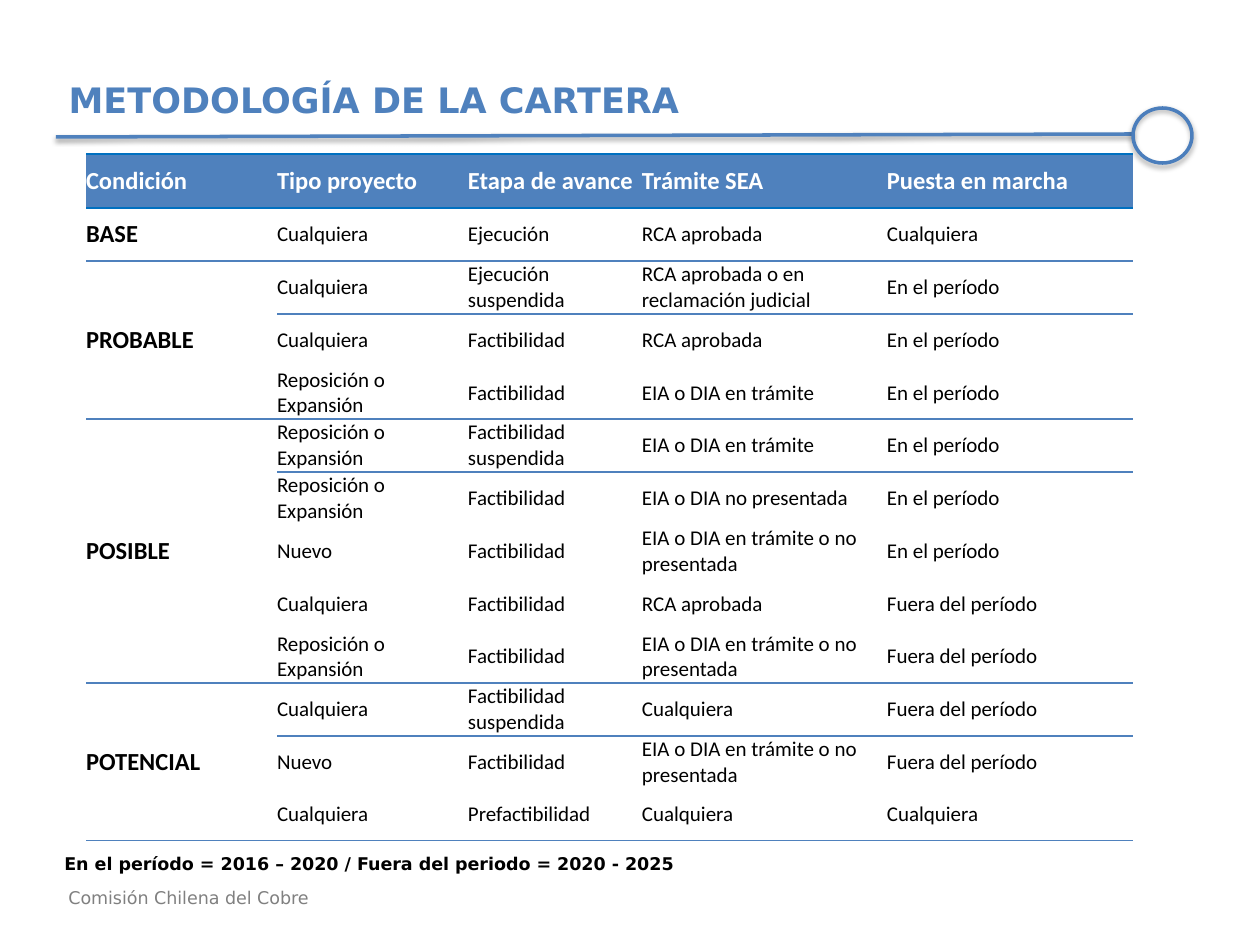
from dataclasses import dataclass

from lxml.etree import SubElement
from pptx import Presentation
from pptx.dml.color import RGBColor as RGB
from pptx.enum.shapes import MSO_CONNECTOR as Connector, MSO_SHAPE as Shape
from pptx.enum.text import MSO_ANCHOR as Anchor, MSO_AUTO_SIZE as AutoSize, PP_ALIGN as Align
from pptx.oxml.ns import qn
from pptx.util import Emu, Pt


@dataclass(frozen=True)
class Theme:
    """Colours, fonts and type sizes of the slide."""
    accent: str = "4F81BD"
    ring: str = "4B7EBC"
    header_rule: str = "0070C0"
    white: str = "FFFFFF"
    black: str = "000000"
    grey: str = "808080"
    display_font: str = "DejaVu Sans"
    table_font: str = "Calibri"
    title_size: int = 20
    label_size: int = 14
    body_size: int = 12
    note_size: int = 10


THEME = Theme()
NO_STYLE = "{2D5ABB26-0587-4C30-8999-92F81FD0307C}"
COLUMN_WIDTHS = [191, 191, 174, 245, 246]
HEADER_HEIGHT = 54
ROW_HEIGHT = 53
HEADINGS = ["Condición", "Tipo proyecto", "Etapa de avance", "Trámite SEA", "Puesta en marcha"]
GROUPS = {
    "BASE": [
        ("Cualquiera", "Ejecución", "RCA aprobada", "Cualquiera"),
    ],
    "PROBABLE": [
        ("Cualquiera", "Ejecución suspendida", "RCA aprobada o en reclamación judicial", "En el período"),
        ("Cualquiera", "Factibilidad", "RCA aprobada", "En el período"),
        ("Reposición o Expansión", "Factibilidad", "EIA o DIA en trámite", "En el período"),
    ],
    "POSIBLE": [
        ("Reposición o Expansión", "Factibilidad suspendida", "EIA o DIA en trámite", "En el período"),
        ("Reposición o Expansión", "Factibilidad", "EIA o DIA no presentada", "En el período"),
        ("Nuevo", "Factibilidad", "EIA o DIA en trámite o no presentada", "En el período"),
        ("Cualquiera", "Factibilidad", "RCA aprobada", "Fuera del período"),
        ("Reposición o Expansión", "Factibilidad", "EIA o DIA en trámite o no presentada", "Fuera del período"),
    ],
    "POTENCIAL": [
        ("Cualquiera", "Factibilidad suspendida", "Cualquiera", "Fuera del período"),
        ("Nuevo", "Factibilidad", "EIA o DIA en trámite o no presentada", "Fuera del período"),
        ("Cualquiera", "Prefactibilidad", "Cualquiera", "Cualquiera"),
    ],
}


def px(length):
    """Turn pixels into EMU."""
    return Emu(round(length * 914400 / 126))


def set_font(paragraph, name, size, color, bold=False):
    """Format a whole paragraph."""
    font = paragraph.font
    font.name, font.size, font.bold = name, Pt(size), bold
    font.color.rgb = RGB.from_string(color)


def set_line(shape, color):
    """Give a shape or connector its two-point line."""
    shape.line.color.rgb = RGB.from_string(color)
    shape.line.width = Pt(2)


def add_shadow(effects, opacity, distance):
    """Put a soft downward shadow in an effect list."""
    shadow = SubElement(effects, qn("a:outerShdw"), blurRad=str(Pt(3.1)), dist=str(Pt(distance)),
                        dir="5400000", rotWithShape="0")
    color = SubElement(shadow, qn("a:srgbClr"), val=THEME.black)
    SubElement(color, qn("a:alpha"), val=str(opacity * 1000))


def place_title(slide, text, left, top, width, height):
    """Move and format the title placeholder."""
    title = slide.shapes.title
    title.left, title.top, title.width, title.height = map(px, (left, top, width, height))
    frame = title.text_frame
    frame.text = text
    frame.auto_size = AutoSize.NONE
    frame.vertical_anchor = Anchor.TOP
    paragraph = frame.paragraphs[0]
    paragraph.alignment = Align.LEFT
    paragraph.space_before = Pt(0)
    set_font(paragraph, THEME.display_font, THEME.title_size, THEME.accent, True)


def add_title_rule(slide, left, top, width, height):
    """Draw the rule under the title, ending in a ring."""
    ring_width = 59
    ring_left = left + width - ring_width
    rule = slide.shapes.add_connector(Connector.STRAIGHT, px(left), px(top + 29),
                                      px(ring_left), px(top + 26))
    set_line(rule, THEME.accent)
    properties = rule._element.spPr
    add_shadow(SubElement(properties, qn("a:effectLst")), 38, 1.6)
    ring = slide.shapes.add_shape(Shape.OVAL, px(ring_left), px(top), px(ring_width), px(height))
    ring.fill.background()
    set_line(ring, THEME.ring)
    ring.shadow.inherit = False
    add_shadow(ring._element.spPr.find(qn("a:effectLst")), 35, 1.8)


def set_borders(cell, top=None, bottom=None):
    """Draw the given one-point borders of a cell."""
    properties = cell._tc.get_or_add_tcPr()
    borders = [(tag, color) for tag, color in (("a:lnT", top), ("a:lnB", bottom)) if color]
    for index, (tag, color) in enumerate(borders):
        line = SubElement(properties, qn(tag), w=str(Pt(1)))
        SubElement(SubElement(line, qn("a:solidFill")), qn("a:srgbClr"), val=color)
        properties.insert(index, line)


def fill_cell(cell, text, fill, color, label=False, top=None, bottom=None):
    """Write and format one table cell."""
    cell.text = text
    cell.margin_left = cell.margin_right = cell.margin_top = cell.margin_bottom = 0
    cell.vertical_anchor = Anchor.MIDDLE
    cell.fill.solid()
    cell.fill.fore_color.rgb = RGB.from_string(fill)
    paragraph = cell.text_frame.paragraphs[0]
    paragraph.alignment = Align.JUSTIFY if label else Align.LEFT
    set_font(paragraph, THEME.table_font, THEME.label_size if label else THEME.body_size, color, label)
    set_borders(cell, top, bottom)


def fill_group(table, first, label, rows, top_rule):
    """Fill the rows of one condition beside its merged label."""
    last = first + len(rows) - 1
    label_cell = table.cell(first, 0)
    if last > first:
        label_cell.merge(table.cell(last, 0))
    fill_cell(label_cell, label, THEME.white, THEME.black, True, top_rule, THEME.accent)
    for row, values in enumerate(rows, first):
        table.rows[row].height = px(ROW_HEIGHT - (first < row == last))
        for column, value in enumerate(values, 1):
            fill_cell(table.cell(row, column), value, THEME.white, THEME.black,
                      top=top_rule if row == first else None,
                      bottom=THEME.accent if row == last else None)


def add_conditions_table(slide, left, top, width, height):
    """Add the table of project conditions."""
    row_count = 1 + sum(map(len, GROUPS.values()))
    frame = slide.shapes.add_table(row_count, len(HEADINGS), px(left), px(top), px(width), px(height))
    table = frame.table
    table._tbl.tblPr.find(qn("a:tableStyleId")).text = NO_STYLE
    table.horz_banding = False
    table.rows[0].height = px(HEADER_HEIGHT)
    for column, (heading, column_width) in enumerate(zip(HEADINGS, COLUMN_WIDTHS)):
        table.columns[column].width = px(column_width)
        fill_cell(table.cell(0, column), heading, THEME.accent, THEME.white, True,
                  THEME.header_rule, THEME.header_rule)
    first = 1
    for label, rows in GROUPS.items():
        fill_group(table, first, label, rows, THEME.header_rule if first == 1 else THEME.accent)
        first += len(rows)


def add_note(slide, text, color, bold, left, top, width, height):
    """Add a one-line note."""
    frame = slide.shapes.add_textbox(px(left), px(top), px(width), px(height)).text_frame
    frame.text = text
    frame.word_wrap = False
    frame.auto_size = AutoSize.SHAPE_TO_FIT_TEXT
    set_font(frame.paragraphs[0], THEME.display_font, THEME.note_size, color, bold)


def main():
    """Build and save the presentation."""
    presentation = Presentation()
    presentation.slide_width, presentation.slide_height = px(1260), px(945)
    slide = presentation.slides.add_slide(presentation.slide_layouts[5])
    add_title_rule(slide, 56, 108, 1136, 55)
    place_title(slide, "METODOLOGÍA DE LA CARTERA", 56, 72, 1148, 86)
    add_note(slide, "Comisión Chilena del Cobre", THEME.grey, False, 56, 881, 276, 34)
    add_conditions_table(slide, 86, 154, sum(COLUMN_WIDTHS), 687)
    add_note(slide, "En el período = 2016 – 2020 / Fuera del periodo = 2020 - 2025",
             THEME.black, True, 52, 847, 654, 34)
    presentation.save("out.pptx")


if __name__ == "__main__":
    main()
